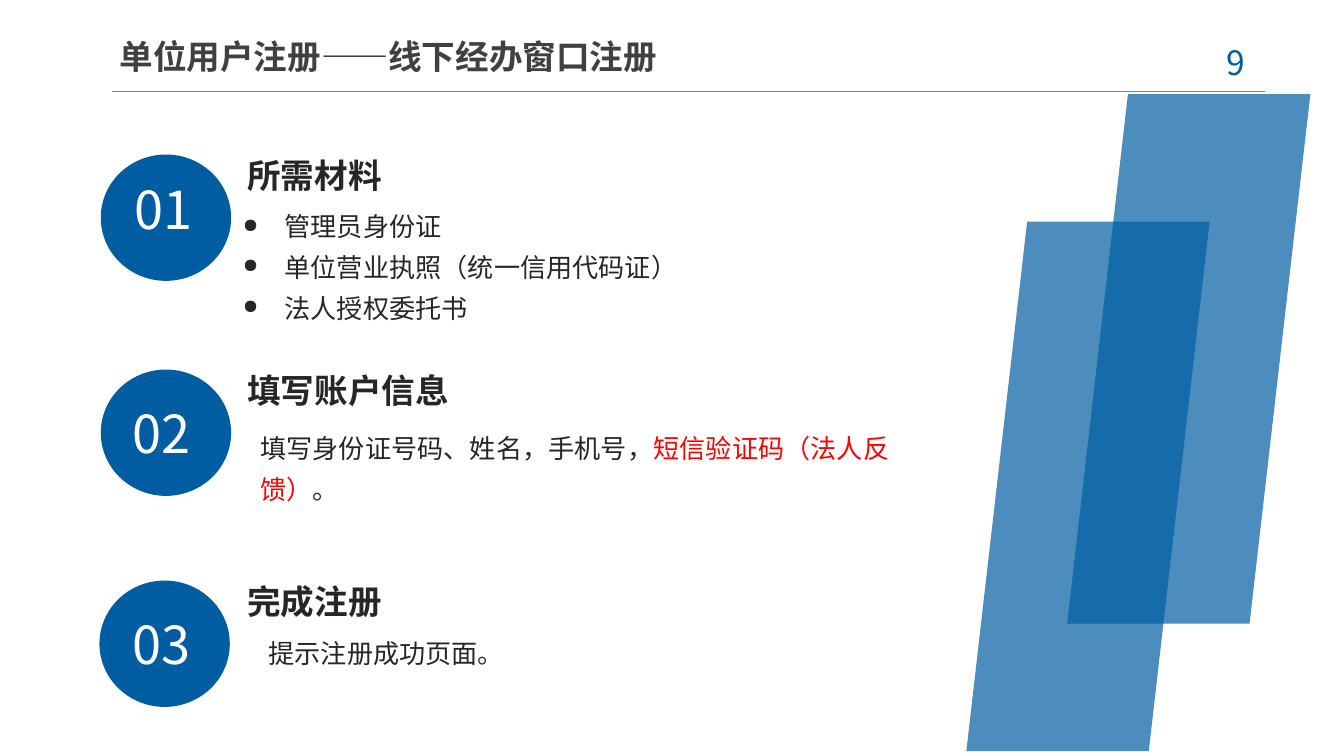
from lxml import etree
from pptx import Presentation
from pptx.dml.color import RGBColor
from pptx.enum.shapes import MSO_CONNECTOR, MSO_SHAPE
from pptx.enum.text import MSO_ANCHOR, MSO_AUTO_SIZE, PP_ALIGN
from pptx.oxml.ns import qn
from pptx.util import Inches, Pt

BLUE = RGBColor(0x00, 0x5D, 0xA2)
GRAY = RGBColor(0x80, 0x80, 0x80)
TITLE_GRAY = RGBColor(0x40, 0x40, 0x40)
DARK = RGBColor(0x26, 0x26, 0x26)
RED = RGBColor(0xFF, 0x00, 0x00)
WHITE = RGBColor(0xFF, 0xFF, 0xFF)
FONT = "Noto Sans CJK SC"
STRAIGHT = MSO_CONNECTOR.STRAIGHT
PARALLELOGRAM, OVAL = MSO_SHAPE.PARALLELOGRAM, MSO_SHAPE.OVAL
TOP, MIDDLE = MSO_ANCHOR.TOP, MSO_ANCHOR.MIDDLE
FIT_SHAPE, NO_FIT = MSO_AUTO_SIZE.SHAPE_TO_FIT_TEXT, MSO_AUTO_SIZE.NONE
LEFT, CENTER, JUSTIFY = PP_ALIGN.LEFT, PP_ALIGN.CENTER, PP_ALIGN.JUSTIFY

deck = Presentation()
deck.slide_width = Inches(10)
deck.slide_height = Inches(10 * 9 / 16)
page = deck.slides.add_slide(deck.slide_layouts[6])


def add_text(paragraphs, place, size=14, color=DARK, bold=False, align=LEFT,
             spacing=None, bullet=None, side=0.1, edge=0.05, wrap=True,
             anchor=TOP, fit=FIT_SHAPE):
    box = page.shapes.add_textbox(*[Inches(value) for value in place])
    frame = box.text_frame
    frame.word_wrap = wrap
    frame.auto_size = fit
    frame.vertical_anchor = anchor
    frame.margin_left = frame.margin_right = Inches(side)
    frame.margin_top = frame.margin_bottom = Inches(edge)
    for index, pieces in enumerate(paragraphs):
        para = frame.paragraphs[0] if index == 0 else frame.add_paragraph()
        para.alignment = align
        properties = para._p.get_or_add_pPr()
        properties.set("hangingPunct", "0")
        if spacing:
            para.line_spacing = spacing
        if bullet:
            properties.set("marL", str(Inches(0.31)))
            properties.set("indent", str(-Inches(0.31)))
            etree.SubElement(properties, qn("a:buSzPct")).set("val", "75000")
            etree.SubElement(properties, qn("a:buChar")).set("char", bullet)
        for text, tint in pieces:
            span = para.add_run()
            span.text = text
            span.font.size = Pt(size)
            span.font.bold = bold
            span.font.color.rgb = tint or color
            span.font.name = FONT
            east_asian = etree.SubElement(span._r.get_or_add_rPr(), qn("a:ea"))
            east_asian.set("typeface", FONT)


def add_filled(kind, place, alpha=None):
    shape = page.shapes.add_shape(kind, *[Inches(value) for value in place])
    shape.shadow.inherit = False
    shape.fill.solid()
    shape.fill.fore_color.rgb = BLUE
    shape.line.fill.background()
    if alpha:
        tint = shape.fill._xPr.find(".//" + qn("a:srgbClr"))
        etree.SubElement(tint, qn("a:alpha")).set("val", str(alpha * 1000))


rule = page.shapes.add_connector(
    STRAIGHT, Inches(0.83), Inches(0.68), Inches(9.41), Inches(0.68))
rule.line.color.rgb = GRAY
rule.line.width = Pt(0.75)
etree.SubElement(rule._element.spPr, qn("a:effectLst"))

add_text([[("9 ", None)]], (8.86, 0.26, 0.73, 0.4), size=18, color=BLUE,
         align=CENTER)
add_text([[("单位用户注册——线下经办窗口注册", None)]], (0.89, 0.21, 5.2, 0.42),
         size=18, color=TITLE_GRAY, bold=True, side=0, anchor=MIDDLE, fit=NO_FIT)

for left, top in [(7.94, 0.7), (7.19, 1.65)]:
    add_filled(PARALLELOGRAM, (left, top, 1.81, 3.94), alpha=70)

steps = [
    ("01", "所需材料", 0.75, 1.15, 0.9, 1.27, 2.22),
    ("02", "填写账户信息", 0.75, 2.75, 0.89, 2.94, 1.89),
    ("03", "完成注册", 0.74, 4.32, 0.89, 4.51, 1.89),
]
for number, heading, left, top, number_left, number_top, heading_width in steps:
    add_filled(OVAL, (left, top, 0.97, 0.94))
    add_text([[(number, None)]], (number_left, number_top, 0.66, 0.57),
             size=28, color=WHITE, wrap=False)
    add_text([[(heading, None)]], (1.84, top, heading_width, 0.3), size=18,
             bold=True, side=0, edge=0)

materials = ["管理员身份证", "单位营业执照（统一信用代码证）", "法人授权委托书"]
add_text([[(material, None)] for material in materials],
         (1.71, 1.45, 5.36, 1.02), align=JUSTIFY, spacing=1.3, bullet="●")
add_text([[("填写身份证号码、姓名，手机号，", None), ("短信验证码（法人反馈）", RED),
           ("。", None)]], (1.84, 3.1, 5.36, 0.41), spacing=1.3)
add_text([[("提示注册成功页面。", None)]], (1.9, 4.65, 5.36, 0.38),
         align=JUSTIFY, spacing=1.2)

deck.save("out.pptx")
